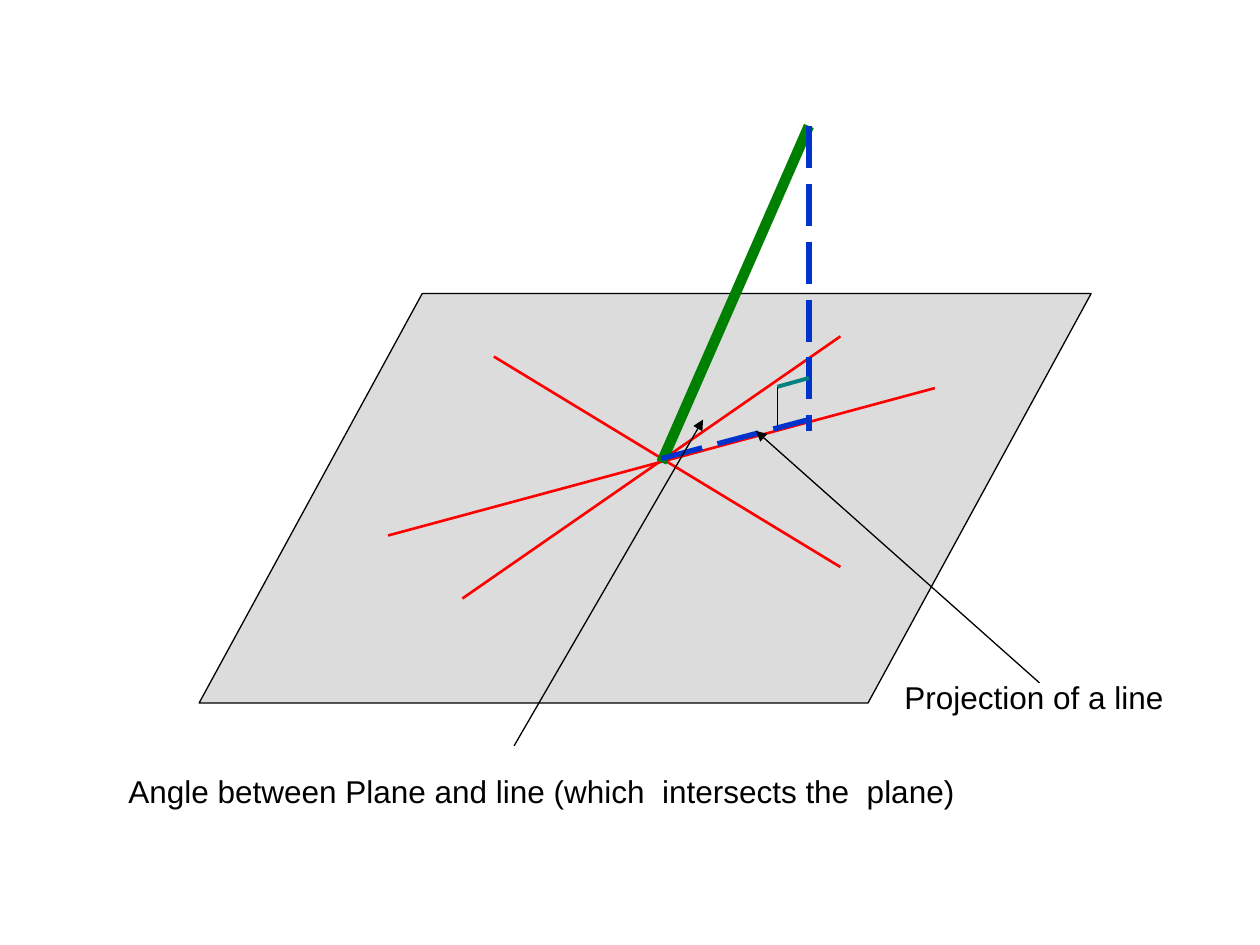
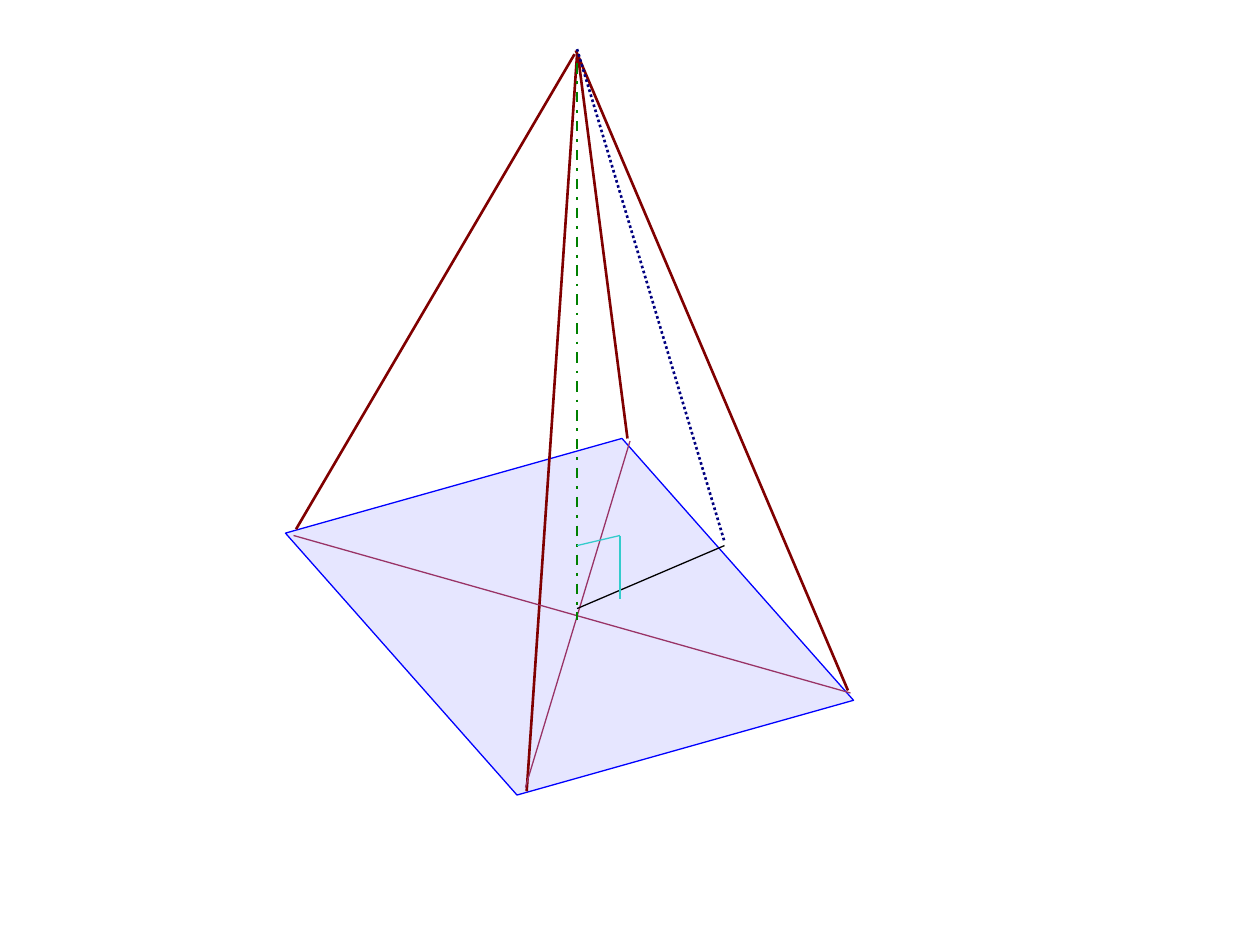
import dataclasses
import typing

import pptx
import pptx.dml.color
import pptx.enum.dml
import pptx.enum.shapes
import pptx.enum.text
import pptx.oxml
import pptx.oxml.ns
import pptx.util

Inches = pptx.util.Inches
Pt = pptx.util.Pt
Dash = pptx.enum.dml.MSO_LINE
Shape = pptx.enum.shapes.MSO_SHAPE
Point = tuple[float, float]

FONT = "Arial"
COLORS = {
    "black": "000000",
    "plane": "C0C0C0",
    "red": "FF0000",
    "green": "008000",
    "projection": "0033CC",
    "teal": "008080",
    "base": "CCCCFF",
    "base edge": "0000FF",
    "side edge": "800000",
    "diagonal": "993366",
    "slant height": "000080",
    "right angle": "33CCCC",
}


@dataclasses.dataclass(frozen=True)
class Line:
    start: Point
    end: Point
    color: str = "black"
    width: float = 0.75
    dash: typing.Any = None
    arrow: bool = False


@dataclasses.dataclass(frozen=True)
class Surface:
    kind: typing.Any
    left: float
    top: float
    width: float
    height: float
    fill: str
    opacity: int
    edge: str
    rotation: float = 0
    slant: float | None = None


@dataclasses.dataclass(frozen=True)
class Label:
    left: float
    top: float
    width: float
    text: str


def rgb(name: str) -> pptx.dml.color.RGBColor:
    return pptx.dml.color.RGBColor.from_string(COLORS[name])


def add_element(parent: typing.Any, tag: str, **attributes: str) -> None:
    child = pptx.oxml.parse_xml(f"<{tag} {pptx.oxml.ns.nsdecls('a')}/>")
    for key, value in attributes.items():
        child.set(key, value)
    parent.append(child)


def draw_surface(page: typing.Any, surface: Surface) -> None:
    shape = page.shapes.add_shape(
        surface.kind, Inches(surface.left), Inches(surface.top),
        Inches(surface.width), Inches(surface.height))
    shape.shadow.inherit = False
    shape.rotation = surface.rotation
    if surface.slant is not None:
        shape.adjustments[0] = surface.slant
    shape.fill.solid()
    shape.fill.fore_color.rgb = rgb(surface.fill)
    fill_color = shape._element.spPr.find(
        f"{pptx.oxml.ns.qn('a:solidFill')}/{pptx.oxml.ns.qn('a:srgbClr')}")
    add_element(fill_color, "a:alpha", val=str(surface.opacity * 1000))
    shape.line.color.rgb = rgb(surface.edge)
    shape.line.width = Pt(0.75)


def draw_lines(shapes: typing.Any, lines: list[Line]) -> None:
    for line in lines:
        connector = shapes.add_connector(
            pptx.enum.shapes.MSO_CONNECTOR.STRAIGHT,
            *(Inches(value) for value in line.start + line.end))
        connector.line.color.rgb = rgb(line.color)
        connector.line.width = Pt(line.width)
        if line.dash is not None:
            connector.line.dash_style = line.dash
        if line.arrow:
            add_element(connector.line._get_or_add_ln(), "a:tailEnd", type="triangle")
        add_element(connector._element.spPr, "a:effectLst")


def draw_line_group(page: typing.Any, lines: list[Line]) -> None:
    draw_lines(page.shapes.add_group_shape().shapes, lines)


def draw_label(page: typing.Any, label: Label) -> None:
    box = page.shapes.add_textbox(
        Inches(label.left), Inches(label.top), Inches(label.width), Inches(0.4))
    frame = box.text_frame
    frame.word_wrap = True
    frame.auto_size = pptx.enum.text.MSO_AUTO_SIZE.SHAPE_TO_FIT_TEXT
    span = frame.paragraphs[0].add_run()
    span.text = label.text
    span.font.name = FONT
    span.font.size = Pt(18)
    span.font.color.rgb = rgb("black")


def build_line_and_plane(page: typing.Any) -> None:
    top = (6.42, 1)
    mark_corner = (6.17, 3.07)
    draw_surface(page, Surface(Shape.PARALLELOGRAM, 1.58, 2.33, 7.08, 3.25,
                               "plane", 55, "black", slant=0.545))
    lines_in_plane = [
        ((3.08, 4.25), (7.42, 3.08)),
        ((3.92, 2.83), (6.67, 4.5)),
        ((3.67, 4.75), (6.67, 2.67)),
    ]
    draw_lines(page.shapes, [Line(start, end, "red", 1.5) for start, end in lines_in_plane])
    draw_lines(page.shapes, [
        Line((5.25, 3.67), top, "green", 6),
        Line(top, (6.42, 3.42), "projection", 3, Dash.LONG_DASH),
    ])
    draw_line_group(page, [
        Line((6.42, 3), mark_corner, "teal", 2.25),
        Line(mark_corner, (6.17, 3.42)),
    ])
    draw_lines(page.shapes, [
        Line((5.25, 3.64), (6.42, 3.33), "projection", 3, Dash.LONG_DASH),
        Line((8.25, 5.42), (6, 3.42), arrow=True),
    ])
    draw_label(page, Label(7.08, 5.33, 2.5, "Projection of a line"))
    draw_label(page, Label(0.92, 6.08, 7,
                           "Angle between Plane and line (which  intersects the  plane)"))
    draw_lines(page.shapes, [Line((4.08, 5.92), (5.58, 3.33), arrow=True)])


def build_pyramid(page: typing.Any) -> None:
    mark_corner = (4.92, 4.25)
    draw_surface(page, Surface(Shape.FLOWCHART_DECISION, 2.17, 3.42, 4.7, 2.95,
                               "base", 48, "base edge", rotation=16.4))
    side_edges = [
        ((4.18, 6.28), (4.58, 0.43)),
        ((4.59, 0.46), (4.98, 3.48)),
        ((4.57, 0.4), (6.73, 5.48)),
        ((4.56, 0.43), (2.35, 4.2)),
    ]
    diagonals = [((2.33, 4.25), (6.75, 5.5)), ((5, 3.5), (4.17, 6.25))]
    draw_lines(page.shapes, [Line(start, end, "side edge", 1.5) for start, end in side_edges])
    draw_lines(page.shapes, [Line(start, end, "diagonal") for start, end in diagonals])
    draw_lines(page.shapes, [Line((4.58, 0.5), (4.58, 4.92), "green", 1.5, Dash.DASH_DOT)])
    draw_line_group(page, [
        Line((4.58, 0.39), (5.75, 4.3), "slant height", 1.5, Dash.ROUND_DOT),
        Line((4.58, 4.83), (5.75, 4.33)),
    ])
    draw_line_group(page, [
        Line((4.58, 4.33), mark_corner, "right angle"),
        Line(mark_corner, (4.92, 4.75), "right angle"),
    ])


def main() -> None:
    deck = pptx.Presentation()
    deck.slide_width = Inches(10)
    deck.slide_height = Inches(7.5)
    blank = deck.slide_layouts[6]
    for build in (build_line_and_plane, build_pyramid):
        build(deck.slides.add_slide(blank))
    deck.save("out.pptx")


if __name__ == "__main__":
    main()
